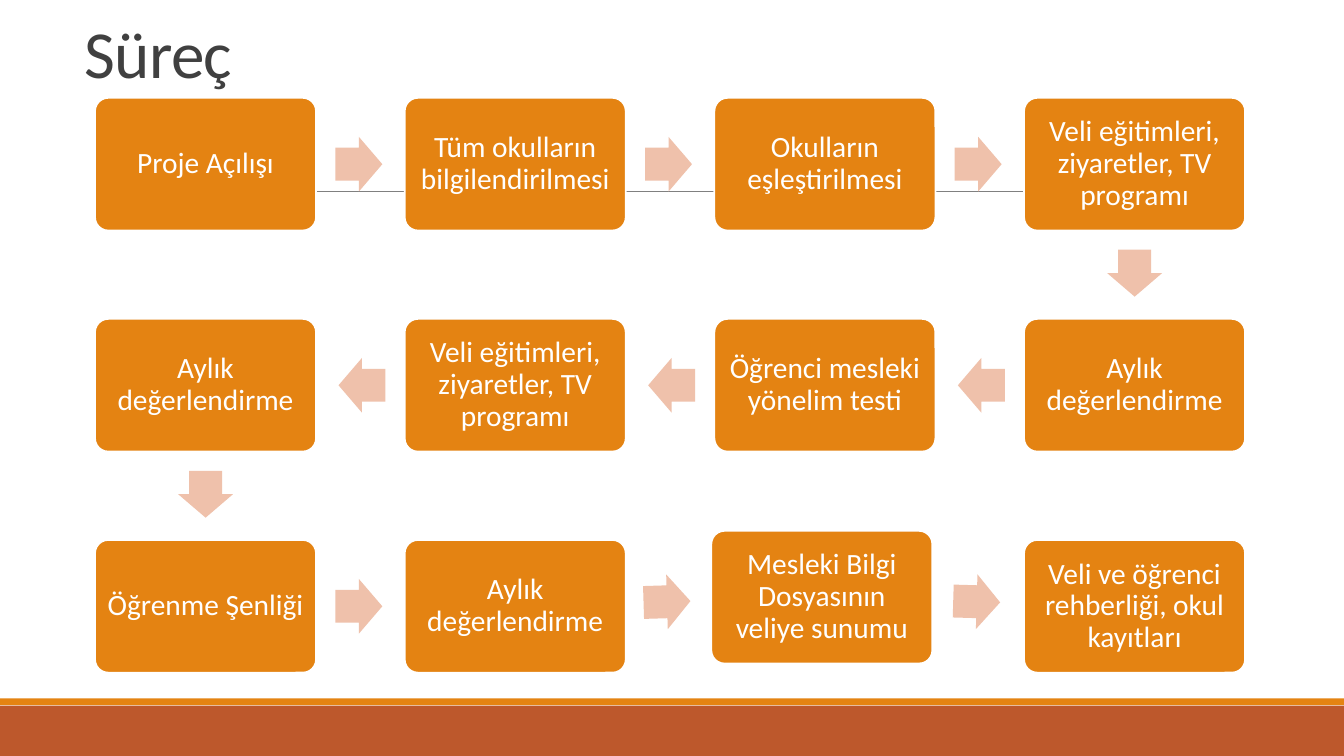
from math import atan2, degrees
from itertools import pairwise

from lxml.etree import SubElement
from pptx import Presentation
from pptx.dml.color import RGBColor
from pptx.enum.shapes import MSO_CONNECTOR, MSO_SHAPE
from pptx.enum.text import MSO_ANCHOR, PP_ALIGN
from pptx.oxml.ns import qn
from pptx.util import Pt

COLORS = {
    "box": "E48312",
    "arrow": "EFC1AB",
    "footer": "BD582C",
    "rule": "808080",
    "title": "404040",
    "white": "FFFFFF",
}
FONT = "Calibri"

BOX_W, BOX_H = 157.9, 94.8
STEP_X, STEP_Y = 221.2, 157.9
LEFT, TOP = 67.9, 69.9
ARROW_W, ARROW_H = 33.5, 39.1
ARROW_BACK = 1.1

STEPS = [
    "Proje Açılışı",
    "Tüm okulların bilgilendirilmesi",
    "Okulların eşleştirilmesi",
    "Veli eğitimleri, ziyaretler, TV programı",
    "Aylık değerlendirme",
    "Öğrenci mesleki yönelim testi",
    "Veli eğitimleri, ziyaretler, TV programı",
    "Aylık değerlendirme",
    "Öğrenme Şenliği",
    "Aylık değerlendirme",
    "Mesleki Bilgi Dosyasının veliye sunumu",
    "Veli ve öğrenci rehberliği, okul kayıtları",
]
COLUMNS = 4
NUDGES = {10: (-2.2, -6.5)}


def rgb(name):
    return RGBColor.from_string(COLORS[name])


def add_filled(s, kind, x, y, w, h, color):
    sp = s.shapes.add_shape(kind, Pt(x), Pt(y), Pt(w), Pt(h))
    sp.shadow.inherit = False
    sp.fill.solid()
    sp.fill.fore_color.rgb = rgb(color)
    sp.line.fill.background()
    return sp


def add_run(p, text, size, color):
    r = p.add_run()
    r.text = text
    r.font.name = FONT
    r.font.size = Pt(size)
    r.font.color.rgb = rgb(color)
    return r


def add_rule(s, x1, x2, y):
    line = s.shapes.add_connector(MSO_CONNECTOR.STRAIGHT, Pt(x1), Pt(y), Pt(x2), Pt(y))
    line.line.color.rgb = rgb("rule")
    line.line.width = Pt(0.5)
    SubElement(line._element.spPr, qn("a:effectLst"))


def add_title(s, text):
    sp = s.shapes.add_textbox(Pt(53.3), Pt(13), Pt(792), Pt(56.2))
    tf = sp.text_frame
    tf.word_wrap = True
    tf.vertical_anchor = MSO_ANCHOR.BOTTOM
    p = tf.paragraphs[0]
    p.line_spacing = 0.85
    r = add_run(p, text, 48, "title")
    r.font._element.set("spc", "-50")


def step_center(index):
    """Centre of a step; the rows run in alternating directions."""
    row, col = divmod(index, COLUMNS)
    if row % 2:
        col = COLUMNS - 1 - col
    dx, dy = NUDGES.get(index, (0, 0))
    return (LEFT + BOX_W / 2 + col * STEP_X + dx,
            TOP + BOX_H / 2 + row * STEP_Y + dy)


def add_step(s, center, text):
    x, y = center
    sp = add_filled(s, MSO_SHAPE.ROUNDED_RECTANGLE,
                    x - BOX_W / 2, y - BOX_H / 2, BOX_W, BOX_H, "box")
    sp.adjustments[0] = 0.1
    sp.line.color.rgb = rgb("white")
    sp.line.width = Pt(1.25)
    tf = sp.text_frame
    tf.word_wrap = True
    tf.vertical_anchor = MSO_ANCHOR.MIDDLE
    tf.margin_left = tf.margin_right = tf.margin_top = tf.margin_bottom = Pt(6.3)
    p = tf.paragraphs[0]
    p.alignment = PP_ALIGN.CENTER
    p.line_spacing = 0.9
    add_run(p, text, 21, "white")


def add_arrow(s, start, end):
    """Block arrow midway between two step centres, set slightly back."""
    dx, dy = end[0] - start[0], end[1] - start[1]
    length = (dx ** 2 + dy ** 2) ** 0.5
    x = (start[0] + end[0]) / 2 - ARROW_BACK * dx / length
    y = (start[1] + end[1]) / 2 - ARROW_BACK * dy / length
    sp = add_filled(s, MSO_SHAPE.RIGHT_ARROW,
                    x - ARROW_W / 2, y - ARROW_H / 2, ARROW_W, ARROW_H, "arrow")
    sp.adjustments[0] = 0.6
    sp.adjustments[1] = 0.5
    sp.rotation = degrees(atan2(dy, dx)) % 360


def main():
    prs = Presentation()
    prs.slide_width, prs.slide_height = Pt(960), Pt(540)
    s = prs.slides.add_slide(prs.slide_layouts[6])

    add_filled(s, MSO_SHAPE.RECTANGLE, 0, 504, 960, 36, "footer")
    add_filled(s, MSO_SHAPE.RECTANGLE, 0, 498.8, 960, 5, "box")
    add_rule(s, 94, 879, 136.8)
    add_title(s, "Süreç")

    centers = [step_center(i) for i in range(len(STEPS))]
    for center, text in zip(centers, STEPS):
        add_step(s, center, text)
    for start, end in pairwise(centers):
        add_arrow(s, start, end)

    prs.save("out.pptx")


if __name__ == "__main__":
    main()
